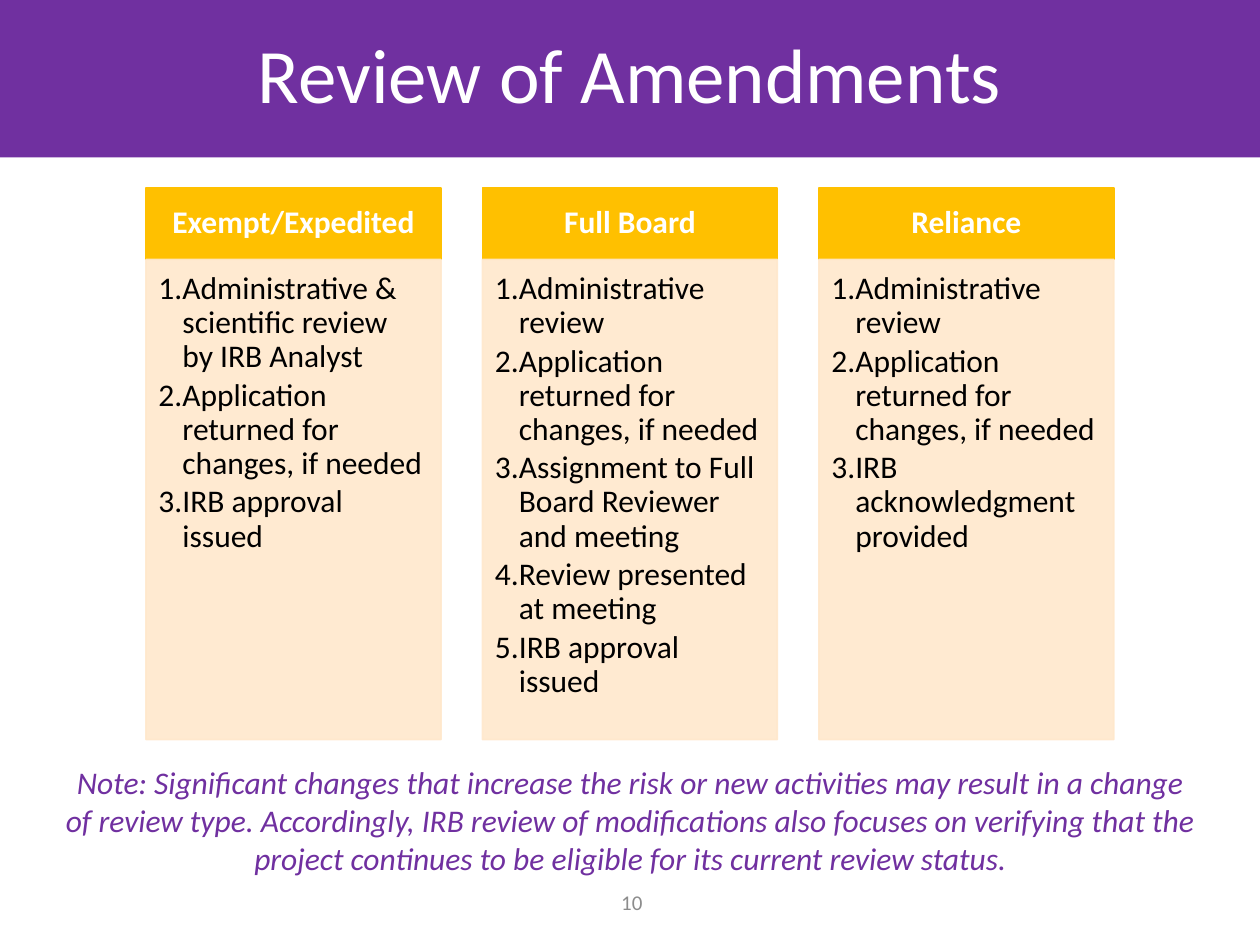
from lxml import etree
from pptx import Presentation
from pptx import util as u
from pptx.dml.color import RGBColor
from pptx.enum import shapes, text
from pptx.oxml.ns import qn

TITLE = "Review of Amendments"
RETURN = "Application returned for changes, if needed"
TRACKS = [
    ("Exempt/Expedited", [
        "Administrative & scientific review by IRB Analyst",
        RETURN,
        "IRB approval issued",
    ]),
    ("Full Board", [
        "Administrative review",
        RETURN,
        "Assignment to Full Board Reviewer and meeting",
        "Review presented at meeting",
        "IRB approval issued",
    ]),
    ("Reliance", [
        "Administrative review",
        RETURN,
        "IRB acknowledgment provided",
    ]),
]
NOTE = (
    "Note: Significant changes that increase the risk or new activities may "
    "result in a change of review type. Accordingly, IRB review of "
    "modifications also focuses on verifying that the project continues to "
    "be eligible for its current review status."
)
PAGE = "10"

PURPLE = RGBColor(0x70, 0x30, 0xA0)
GOLD = RGBColor(0xFF, 0xC0, 0x00)
CREAM = RGBColor(0xFF, 0xE8, 0xCC)
WHITE = RGBColor(0xFF, 0xFF, 0xFF)
BLACK = RGBColor(0, 0, 0)
GRAY = RGBColor(0x8C, 0x8C, 0x8C)

WIDE, HIGH = 10, 7.5
COL, GAP = 2.34, 0.33
TOP, HEAD, BODY = 1.49, 0.57, 3.81
LEFT = (WIDE - len(TRACKS) * COL - (len(TRACKS) - 1) * GAP) / 2
INDENT = 0.19
CENTER = text.PP_ALIGN.CENTER
MIDDLE = text.MSO_ANCHOR.MIDDLE

prs = Presentation()
prs.slide_width, prs.slide_height = u.Inches(WIDE), u.Inches(HIGH)
slide = prs.slides.add_slide(prs.slide_layouts[6])


def fade(shape, share):
    """Make the fill and line of a shape partly transparent."""
    for clr in shape._element.spPr.iter(qn("a:srgbClr")):
        etree.SubElement(clr, qn("a:alpha"), val=str(share * 1000))


def rect(box, color, edge=False):
    shape = slide.shapes.add_shape(
        shapes.MSO_SHAPE.RECTANGLE, *map(u.Inches, box))
    shape.shadow.inherit = False
    shape.fill.solid()
    shape.fill.fore_color.rgb = color
    if edge:
        shape.line.color.rgb = color
        shape.line.width = u.Pt(1)
    else:
        shape.line.fill.background()
    return shape


def label(box):
    return slide.shapes.add_textbox(*map(u.Inches, box))


def write(shape, lines, size, color, align=CENTER, anchor=MIDDLE,
          pads=(0.1, 0.05, 0.1, 0.05), space=None, after=0,
          number=False, bold=False, italic=False):
    frame = shape.text_frame
    frame.word_wrap = True
    frame.vertical_anchor = anchor
    (frame.margin_left, frame.margin_top,
     frame.margin_right, frame.margin_bottom) = map(u.Inches, pads)
    frame.text = "\n".join(lines)
    for para in frame.paragraphs:
        para.alignment = align
        para.line_spacing = space
        para.space_after = u.Pt(after)
        if number:
            para.level = 1
            props = para._p.get_or_add_pPr()
            props.set("marL", str(u.Inches(INDENT)))
            props.set("indent", str(-u.Inches(INDENT)))
            etree.SubElement(props, qn("a:buAutoNum"), type="arabicPeriod")
        font = para.font
        font.name, font.size = "Calibri", u.Pt(size)
        font.bold, font.italic = bold, italic
        font.color.rgb = color


write(rect((0, 0, WIDE, 1.25), PURPLE), [TITLE], 44, WHITE, space=0.9)
write(label((4.68, 6.96, 0.67, 0.4)), [PAGE], 12, GRAY)

for i, (name, steps) in enumerate(TRACKS):
    x = LEFT + i * (COL + GAP)
    write(rect((x, TOP, COL, HEAD), GOLD, edge=True), [name], 18, WHITE,
          pads=(0.14, 0.08, 0.14, 0.08), space=0.9, bold=True)
    panel = rect((x, TOP + HEAD, COL, BODY), CREAM, edge=True)
    fade(panel, 90)
    write(panel, steps, 18, BLACK, text.PP_ALIGN.LEFT, text.MSO_ANCHOR.TOP,
          (0.1, 0.1, 0.14, 0.16), space=0.9, after=2.7, number=True)

write(label((0.39, 6.01, 9.23, 1.01)), [NOTE], 18, PURPLE,
      anchor=text.MSO_ANCHOR.TOP, italic=True)

prs.save("out.pptx")
